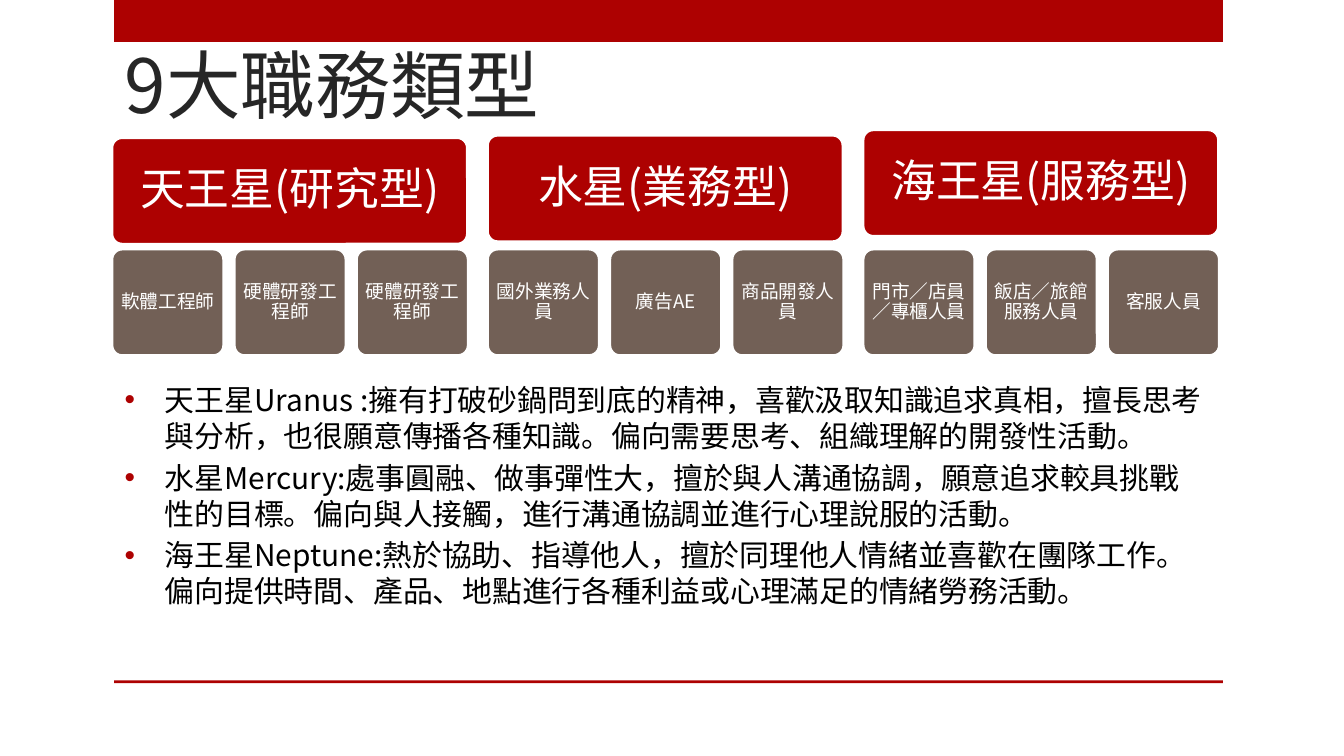
from lxml.etree import SubElement
from pptx import Presentation
from pptx.dml.color import RGBColor
from pptx.enum.shapes import MSO_SHAPE as Kind
from pptx.enum.text import MSO_ANCHOR as Anchor, PP_ALIGN as Align
from pptx.oxml.ns import qn
from pptx.util import Pt

RED = RGBColor(0xAD, 0x01, 0x01)
BROWN = RGBColor(0x72, 0x60, 0x56)
WHITE = RGBColor(0xFF, 0xFF, 0xFF)
BLACK = RGBColor(0, 0, 0)
DARK = RGBColor(0x26, 0x26, 0x26)
FONT = "Noto Sans CJK SC"

LEFT = 59.7
GROUP_STEP, JOB_STEP = 201.2, 65.5
HEAD_W, JOB_W, BOX_H = 191, 60.4, 57.6
JOB_TOP = 133.2

# heading, its top, job titles
GROUPS = [
    ("天王星(研究型)", 73.5, ["軟體工程師", "硬體研發工程師", "硬體研發工程師"]),
    ("水星(業務型)", 72.2, ["國外業務人員", "廣告AE", "商品開發人員"]),
    ("海王星(服務型)", 69.3, ["門市／店員／專櫃人員", "飯店／旅館服務人員", "客服人員"]),
]
NOTES = [
    "天王星Uranus :擁有打破砂鍋問到底的精神，喜歡汲取知識追求真相，擅長思考與分析，"
    "也很願意傳播各種知識。偏向需要思考、組織理解的開發性活動。",
    "水星Mercury:處事圓融、做事彈性大，擅於與人溝通協調，願意追求較具挑戰性的目標。"
    "偏向與人接觸，進行溝通協調並進行心理說服的活動。",
    "海王星Neptune:熱於協助、指導他人，擅於同理他人情緒並喜歡在團隊工作。"
    "偏向提供時間、產品、地點進行各種利益或心理滿足的情緒勞務活動。",
]


def write(frame, lines, size, color, align=Align.LEFT, anchor=Anchor.MIDDLE,
          pad=(7.2, 3.6, 7.2, 3.6), spacing=None, before=0, bullet=False):
    """Fill a text frame; pad is left, top, right, bottom."""
    frame.word_wrap = True
    frame.vertical_anchor = anchor
    (frame.margin_left, frame.margin_top,
     frame.margin_right, frame.margin_bottom) = map(Pt, pad)
    for i, line in enumerate(lines):
        para = frame.paragraphs[0] if i == 0 else frame.add_paragraph()
        para.alignment = align
        para.line_spacing = spacing
        para.space_before = Pt(before)
        run = para.add_run()
        run.text = line
        font = run.font
        font.name, font.size, font.color.rgb = FONT, Pt(size), color
        SubElement(font._element, qn("a:ea")).set("typeface", FONT)
        if bullet:
            add_bullet(para)


def add_bullet(para):
    props = para._p.get_or_add_pPr()
    props.set("marL", str(Pt(21.6)))
    props.set("indent", str(Pt(-21.6)))
    tint = SubElement(props, qn("a:buClr"))
    SubElement(tint, qn("a:srgbClr")).set("val", str(RED))
    SubElement(props, qn("a:buFont")).set("typeface", "Arial")
    SubElement(props, qn("a:buChar")).set("char", "•")


def add_box(slide, kind, x, y, w, h, fill):
    box = slide.shapes.add_shape(kind, Pt(x), Pt(y), Pt(w), Pt(h))
    box.shadow.inherit = False
    box.fill.solid()
    box.fill.fore_color.rgb = fill
    box.line.fill.background()
    return box


def add_card(slide, text, x, y, w, fill, size, pad):
    card = add_box(slide, Kind.ROUNDED_RECTANGLE, x, y, w, BOX_H, fill)
    card.adjustments[0] = 0.1
    card.line.color.rgb = WHITE
    card.line.width = Pt(2)
    write(card.text_frame, [text], size, WHITE, align=Align.CENTER,
          pad=(pad,) * 4, spacing=0.9)


def add_title(slide, text):
    title = slide.shapes.title
    title.left, title.top = Pt(LEFT), Pt(10)
    title.width, title.height = Pt(534), Pt(62.6)
    write(title.text_frame, [text], 40, DARK, anchor=Anchor.BOTTOM)


def add_group(slide, x, head, top, jobs):
    add_card(slide, head, x, top, HEAD_W, RED, 24, 7.2)
    for i, job in enumerate(jobs):
        add_card(slide, job, x + i * JOB_STEP, JOB_TOP, JOB_W, BROWN, 10, 2.9)


def add_notes(slide):
    box = slide.shapes.add_textbox(Pt(LEFT), Pt(191.5), Pt(594), Pt(170))
    write(box.text_frame, NOTES, 16, BLACK, pad=(7.2, 3.6, 7.2, 26),
          before=3.2, bullet=True)


def main():
    deck = Presentation()
    deck.slide_width, deck.slide_height = Pt(720), Pt(405)
    slide = deck.slides.add_slide(deck.slide_layouts[5])
    for y, h in ((0, 22.5), (364.5, 1.5)):
        add_box(slide, Kind.RECTANGLE, 61.2, y, 594, h, RED)
    add_title(slide, "9大職務類型")
    for i, group in enumerate(GROUPS):
        add_group(slide, LEFT + i * GROUP_STEP, *group)
    add_notes(slide)
    deck.save("out.pptx")


if __name__ == "__main__":
    main()
